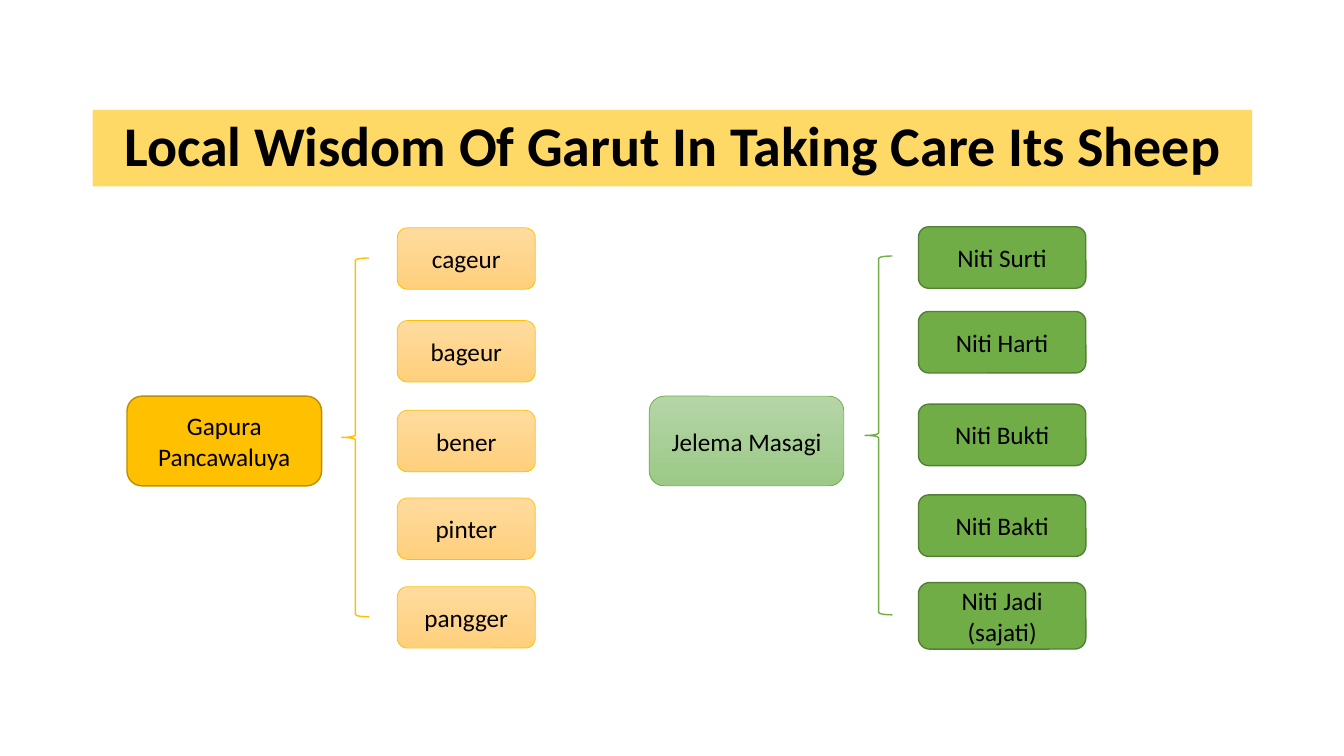
from dataclasses import dataclass

from pptx import Presentation
from pptx import util as u
from pptx.dml.color import RGBColor
from pptx.enum import shapes, text

HUES = {
    "black": "000000", "banner": "FFD966",
    "gold": "FFC000", "bronze": "BD8E00", "peach": "FFDB9E", "apricot": "FFD07C",
    "green": "70AD47", "forest": "538035", "mint": "B5D5A7", "sage": "9CC987",
}
KINDS = shapes.MSO_SHAPE
FRAME = {"word_wrap": True, "vertical_anchor": text.MSO_ANCHOR.MIDDLE}
FONT = {"name": "Calibri", "size": u.Pt(18), "bold": False}


@dataclass(frozen=True)
class Style:
    """One fill hue is solid, two run from top to bottom."""
    fill: tuple[str, ...] = ()
    line: str = ""
    width: float = 1


@dataclass(frozen=True)
class Group:
    root: str
    left: float
    look: Style
    brace: tuple[float, float, str]
    column: tuple[float, float]
    leaf: Style
    leaves: tuple[tuple[str, float, float], ...]


GROUPS = (
    Group("Gapura Pancawaluya", 1.26, Style(("gold",), "bronze"),
          (3.39, 2.56, "gold"), (3.94, 1.37),
          Style(("peach", "apricot"), "gold", 0.5),
          (("cageur", 2.26, 0.61), ("bageur", 3.18, 0.61), ("bener", 4.07, 0.61),
           ("pinter", 4.94, 0.61), ("pangger", 5.82, 0.61))),
    Group("Jelema Masagi", 6.44, Style(("mint", "sage"), "green", 0.5),
          (8.58, 2.54, "green"), (9.11, 1.66),
          Style(("green",), "forest"),
          (("Niti Surti", 2.25, 0.61), ("Niti Harti", 3.09, 0.61),
           ("Niti Bukti", 4.01, 0.61), ("Niti Bakti", 4.91, 0.61),
           ("Niti Jadi (sajati)", 5.78, 0.66))),
)


def tint(name: str) -> RGBColor:
    return RGBColor.from_string(HUES[name])


def apply(target, values: dict) -> None:
    for key, value in values.items():
        setattr(target, key, value)


def draw(slide, kind, box: tuple[float, ...], style: Style):
    shape = slide.shapes.add_shape(kind, *map(u.Inches, box))
    shape.shadow.inherit = False
    if len(style.fill) == 2:
        shape.fill.gradient()
        shape.fill.gradient_angle = 270
        for stop, name in zip(shape.fill.gradient_stops, style.fill):
            stop.color.rgb = tint(name)
    elif style.fill:
        shape.fill.solid()
        shape.fill.fore_color.rgb = tint(style.fill[0])
    else:
        shape.fill.background()
    if style.line:
        shape.line.color.rgb = tint(style.line)
        shape.line.width = u.Pt(style.width)
    else:
        shape.line.fill.background()
    return shape


def label(shape, words: str, **extra) -> None:
    apply(shape.text_frame, FRAME)
    para = shape.text_frame.paragraphs[0]
    para.alignment = text.PP_ALIGN.CENTER
    run = para.add_run()
    run.text = words
    apply(run.font, FONT | extra)
    run.font.color.rgb = tint("black")


def branch(slide, group: Group) -> None:
    """Draw a root box, its brace and its column of leaves."""
    root = draw(slide, KINDS.ROUNDED_RECTANGLE, (group.left, 3.93, 1.93, 0.89), group.look)
    label(root, group.root)
    left, width = group.column
    for words, top, height in group.leaves:
        leaf = draw(slide, KINDS.ROUNDED_RECTANGLE, (left, top, width, height), group.leaf)
        label(leaf, words)
    left, top, hue = group.brace
    draw(slide, KINDS.LEFT_BRACE, (left, top, 0.27, 3.56), Style(line=hue))


def main() -> None:
    deck = Presentation()
    apply(deck, {"slide_width": u.Inches(13.33), "slide_height": u.Inches(7.5)})
    slide = deck.slides.add_slide(deck.slide_layouts[6])
    title = draw(slide, KINDS.RECTANGLE, (0.92, 1.09, 11.5, 0.76), Style(("banner",)))
    label(title, "Local Wisdom Of Garut In Taking Care Its Sheep", size=u.Pt(40), bold=True)
    title.text_frame.paragraphs[0].line_spacing = 0.9
    for group in GROUPS:
        branch(slide, group)
    deck.save("out.pptx")


if __name__ == "__main__":
    main()
